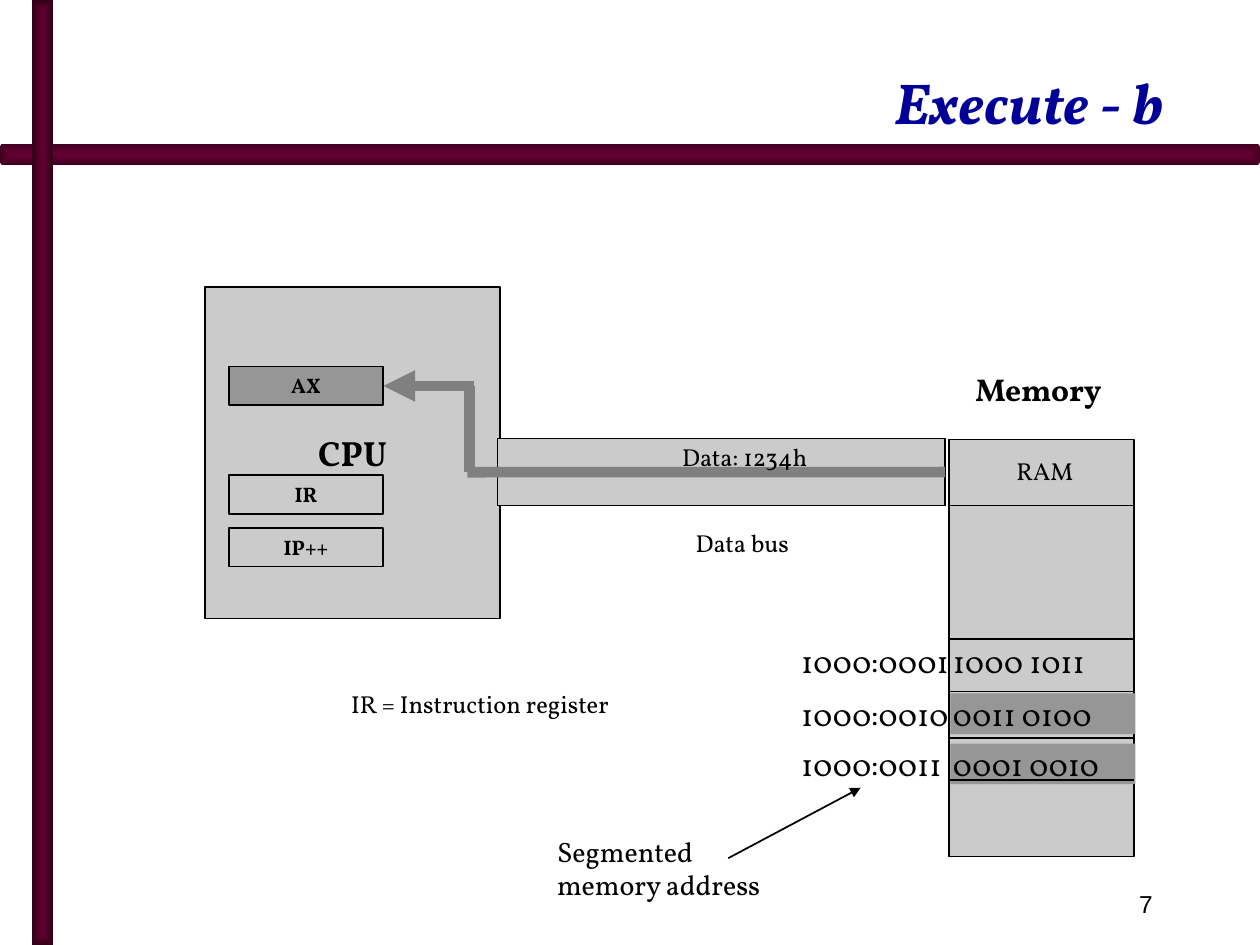
from dataclasses import dataclass

from lxml.etree import SubElement
from pptx import Presentation
from pptx.dml.color import RGBColor
from pptx.enum.shapes import MSO_CONNECTOR, MSO_SHAPE
from pptx.enum.text import MSO_ANCHOR, PP_ALIGN
from pptx.oxml.ns import qn
from pptx.util import Cm, Pt


@dataclass(frozen=True)
class Theme:
    font: str = "Vollkorn"
    number_font: str = "Arial"
    ink: str = "000000"
    title_color: str = "000099"
    panel: str = "CBCBCB"
    active: str = "969696"
    flow: str = "808080"
    rail: str = "660033"
    rail_edge: str = "410020"
    rail_edge_dark: str = "2F0018"
    title_size: int = 33
    cpu_size: int = 20
    memory_size: int = 18
    note_size: int = 16
    label_size: int = 14
    register_size: int = 12
    thin: int = 1
    thick: int = 6


THEME = Theme()
NORMAL = (0.25, 0.13)
TIGHT = (0.05, 0.03)
LABEL_INSETS = (0.15, 0)


def write_text(frame, text, size=THEME.label_size, color=THEME.ink, font=THEME.font,
               bold=False, italic=False, align=PP_ALIGN.CENTER,
               anchor=MSO_ANCHOR.TOP, insets=NORMAL, wrap=True):
    frame.word_wrap = wrap
    frame.vertical_anchor = anchor
    frame.margin_left = frame.margin_right = Cm(insets[0])
    frame.margin_top = frame.margin_bottom = Cm(insets[1])
    para = frame.paragraphs[0]
    para.alignment = align
    span = para.add_run()
    span.text = text
    span.font.name = font
    span.font.size = Pt(size)
    span.font.bold = bold
    span.font.italic = italic
    span.font.color.rgb = RGBColor.from_string(color)


class Painter:
    def __init__(self, page, theme):
        self.page = page
        self.theme = theme

    def box(self, left, top, width, height, fill=None, outlined=True,
            kind=MSO_SHAPE.RECTANGLE):
        box = self.page.shapes.add_shape(kind, Cm(left), Cm(top), Cm(width), Cm(height))
        box.shadow.inherit = False
        if fill:
            box.fill.solid()
            box.fill.fore_color.rgb = RGBColor.from_string(fill)
        else:
            box.fill.background()
        if outlined:
            box.line.color.rgb = RGBColor.from_string(self.theme.ink)
            box.line.width = Pt(self.theme.thin)
        else:
            box.line.fill.background()
        return box

    def rail(self, left, top, width, height, edge, kind):
        rail = self.box(left, top, width, height, outlined=False, kind=kind)
        rail.fill.gradient()
        for stop, color in zip(rail.fill.gradient_stops, (self.theme.rail, edge)):
            stop.color.rgb = RGBColor.from_string(color)
        # The gradient runs from the centre out to the edges
        gradient = rail._element.spPr.find(qn("a:gradFill"))
        gradient.remove(gradient.find(qn("a:lin")))
        route = SubElement(gradient, qn("a:path"), {"path": "shape"})
        SubElement(route, qn("a:fillToRect"), dict.fromkeys("ltrb", "50000"))

    def register(self, top, text, fill=None):
        box = self.box(4.61, top, 3.12, 0.78, fill)
        write_text(box.text_frame, text, size=self.theme.register_size, bold=True)
        return box

    def text(self, left, top, width, height, text, **style):
        box = self.page.shapes.add_textbox(Cm(left), Cm(top), Cm(width), Cm(height))
        write_text(box.text_frame, text, **style)

    def line(self, start, end, color=None, width=None, arrow=None):
        line = self.page.shapes.add_connector(
            MSO_CONNECTOR.STRAIGHT, *(Cm(value) for value in (*start, *end)))
        line.line.color.rgb = RGBColor.from_string(color or self.theme.ink)
        line.line.width = Pt(width or self.theme.thin)
        if arrow:
            SubElement(line.line._get_or_add_ln(), qn(arrow), {"type": "triangle"})
        SubElement(line._element.spPr, qn("a:effectLst"))
        return line


def main():
    deck = Presentation()
    deck.slide_width, deck.slide_height = Cm(25.4), Cm(19.05)
    page = deck.slides.add_slide(deck.slide_layouts[6])
    painter = Painter(page, THEME)

    # Rails, title and page number
    painter.rail(0, 2.9, 25.4, 0.43, THEME.rail_edge, MSO_SHAPE.ROUNDED_RECTANGLE)
    painter.rail(0.64, 0, 0.43, 19.05, THEME.rail_edge_dark, MSO_SHAPE.RECTANGLE)
    painter.text(2.11, 0.43, 21.59, 2.44, "Execute - b", size=THEME.title_size,
                 color=THEME.title_color, bold=True, italic=True,
                 align=PP_ALIGN.RIGHT, anchor=MSO_ANCHOR.BOTTOM)
    painter.text(18.21, 17.58, 5.28, 1.27, "7", font=THEME.number_font,
                 align=PP_ALIGN.RIGHT, anchor=MSO_ANCHOR.MIDDLE)

    # CPU and its registers
    cpu = painter.box(4.14, 5.79, 5.94, 6.68, THEME.panel)
    write_text(cpu.text_frame, "CPU", size=THEME.cpu_size, bold=True,
               anchor=MSO_ANCHOR.MIDDLE, wrap=False)
    accumulator = painter.register(7.39, "AX", THEME.active)
    painter.register(9.58, "IR")
    painter.register(10.64, "IP++")
    painter.text(6.83, 13.77, 11.1, 0.86, "IR = Instruction register",
                 align=PP_ALIGN.LEFT)

    # Memory with its addresses and contents
    painter.box(19.13, 8.86, 3.73, 8.41, THEME.panel)
    painter.text(18.8, 7.32, 4.27, 1.02, "Memory", size=THEME.memory_size, bold=True)
    painter.text(19.25, 9.07, 3.63, 0.84, "RAM")
    cell_style = dict(size=THEME.memory_size, align=PP_ALIGN.LEFT, insets=TIGHT)
    for top, address, content, fill in (
            (12.92, "1000:0001", "1000 1011", None),
            (13.98, "1000:0010", "0011 0100", THEME.active),
            (14.99, "1000:0011", "0001 0010", THEME.active)):
        cell = painter.box(19.16, top, 3.73, 0.82, fill, outlined=False)
        write_text(cell.text_frame, content, **cell_style)
        painter.text(16.1, top, 3.5, 0.82, address, **cell_style)
    for height in (10.19, 12.88, 13.94, 14.88, 15.72):
        painter.line((19.16, height), (22.87, height))

    # Data bus and the flow of data into AX
    bus = painter.box(10.03, 8.84, 9.02, 1.35, THEME.panel)
    flow = dict(color=THEME.flow, width=THEME.thick)
    turn, high, low = 9.46, 7.78, 9.52
    into_register = painter.line((7.73, high), (turn + 0.1, high),
                                 arrow="a:headEnd", **flow)
    into_register.begin_connect(accumulator, 3)
    painter.line((turn, high), (turn, low), **flow)
    from_memory = painter.line((turn - 0.04, low), (19.05, low), **flow)
    from_memory.end_connect(bus, 3)
    painter.text(11.94, 8.92, 6.15, 0.61, "Data: 1234h", insets=LABEL_INSETS)
    painter.text(11.89, 10.52, 6.15, 0.84, "Data bus")

    # Note on the addresses
    painter.line((14.68, 17.3), (17.35, 15.88), arrow="a:tailEnd")
    painter.text(11.18, 16.79, 4.78, 1.42, "Segmented memory address",
                 size=THEME.note_size, align=PP_ALIGN.LEFT, insets=TIGHT)

    deck.save("out.pptx")


if __name__ == "__main__":
    main()
